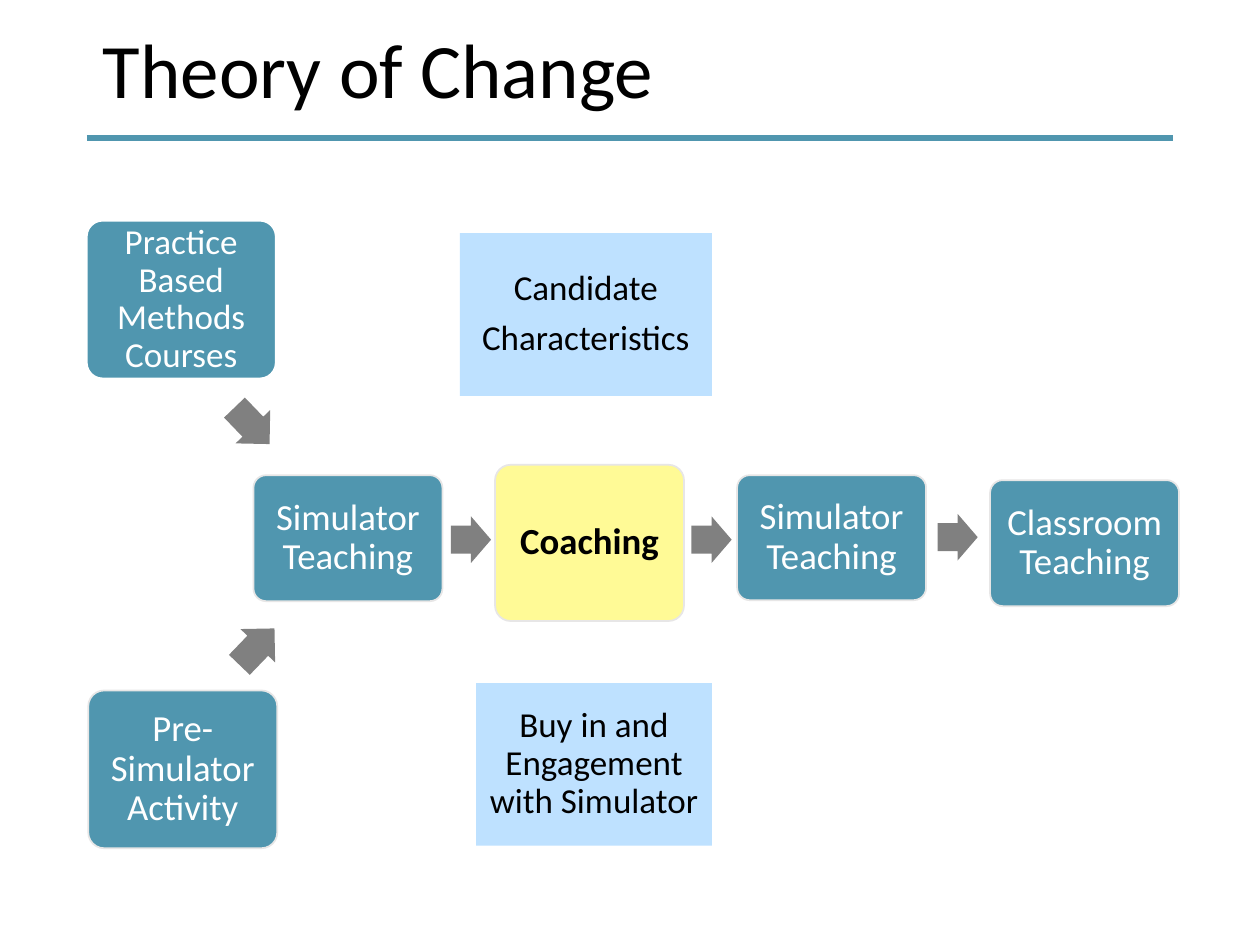
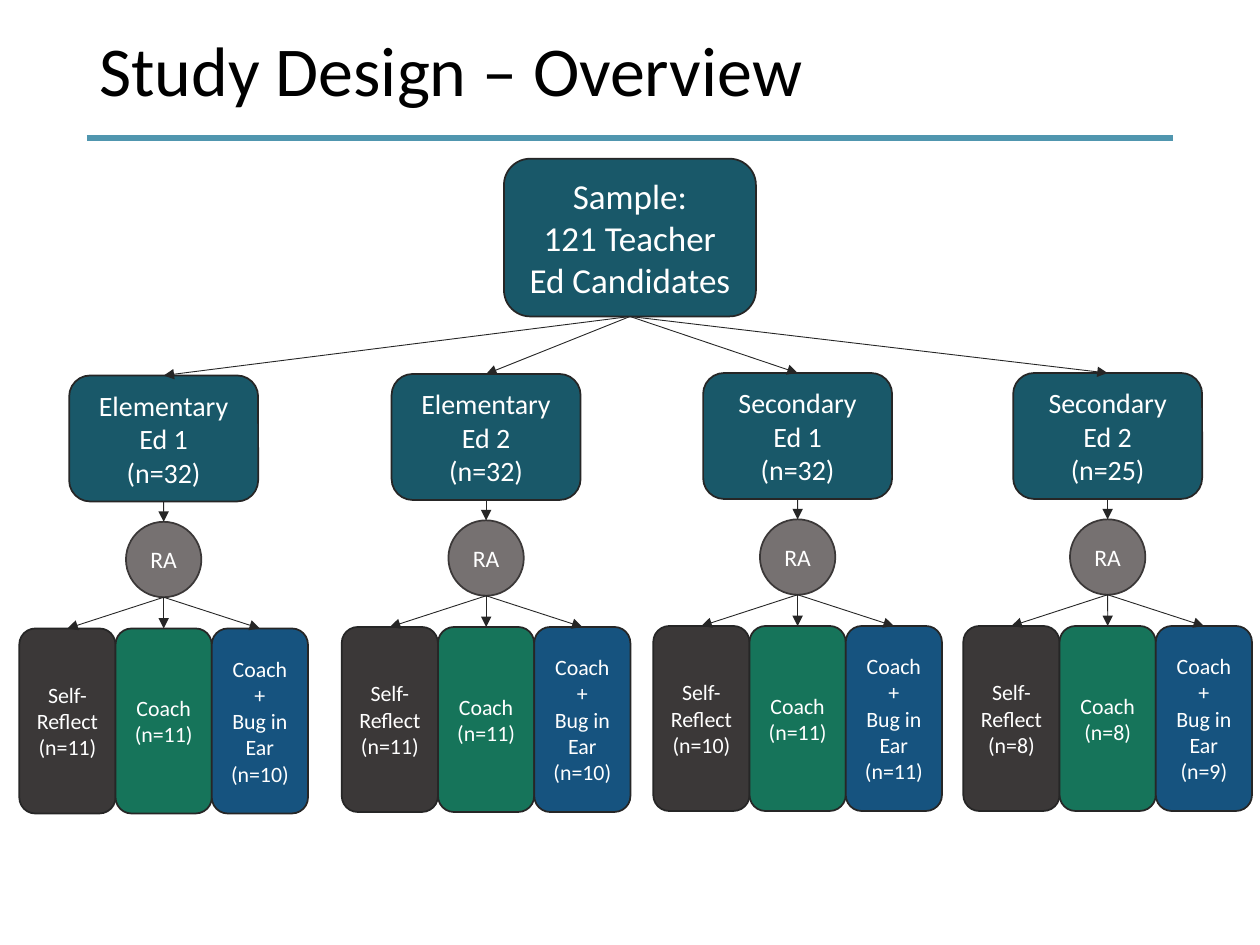
from lxml import etree
from pptx import Presentation
from pptx.dml.color import RGBColor
from pptx.enum.shapes import MSO_CONNECTOR, MSO_SHAPE
from pptx.enum.text import MSO_ANCHOR, MSO_AUTO_SIZE, PP_ALIGN
from pptx.oxml.ns import qn
from pptx.util import Cm, Pt

ROUNDED = MSO_SHAPE.ROUNDED_RECTANGLE
RECTANGLE = MSO_SHAPE.RECTANGLE
CIRCLE = MSO_SHAPE.FLOWCHART_CONNECTOR
BLOCK_ARROW = MSO_SHAPE.RIGHT_ARROW
STRAIGHT = MSO_CONNECTOR.STRAIGHT
CENTER, LEFT = PP_ALIGN.CENTER, PP_ALIGN.LEFT
MIDDLE = MSO_ANCHOR.MIDDLE
NO_AUTOFIT = MSO_AUTO_SIZE.NONE

FONT = "Calibri"
TITLE_ONLY = 5
COLORS = {
    "black": "000000",
    "white": "FFFFFF",
    "teal": "5096AF",
    "border": "E7E6E6",
    "yellow": "FFFA96",
    "sky": "BEE1FF",
    "arrow": "808080",
    "deep_teal": "195869",
    "ink": "262626",
    "gray": "767171",
    "charcoal": "3B3838",
    "green": "16745A",
    "blue": "16537F",
}

# text, left, top, width, height, fill, border, font color, size, bold
STAGES = [
    ("Practice Based Methods Courses", 1.75, 4.45, 3.81, 3.18, "teal", "white", "white", 20, False),
    ("Pre-Simulator Activity", 1.78, 13.92, 3.81, 3.18, "teal", "border", "white", 21, False),
    ("Simulator Teaching", 5.11, 9.58, 3.81, 2.54, "teal", "border", "white", 21, False),
    ("Coaching", 9.98, 9.37, 3.81, 3.15, "yellow", "border", "black", 21, True),
    ("Simulator Teaching", 14.86, 9.58, 3.81, 2.52, "teal", "border", "white", 21, False),
    ("Classroom Teaching", 19.96, 9.68, 3.81, 2.54, "teal", "border", "white", 21, False),
]
# paragraphs, left, top, width, height
MODERATORS = [
    (["Candidate", "Characteristics"], 9.27, 4.7, 5.08, 3.28),
    (["Buy in and Engagement with Simulator"], 9.6, 13.77, 4.75, 3.28),
]
# left, top, width, height, rotation
STAGE_ARROWS = [
    (4.57, 8.1, 1.02, 0.97, 46.1),
    (4.67, 12.55, 1.02, 0.97, 313.9),
    (9.09, 10.41, 0.81, 0.94, 0),
    (13.94, 10.41, 0.81, 0.94, 0),
    (18.9, 10.36, 0.81, 0.94, 0),
]
# name, size, center, top, group sizes (self-reflect, coach, coach + bug in ear)
COHORTS = [
    ("Elementary Ed 1", 32, 3.3, 7.57, (11, 11, 10)),
    ("Elementary Ed 2", 32, 9.8, 7.54, (11, 11, 10)),
    ("Secondary Ed 1", 32, 16.08, 7.52, (10, 11, 11)),
    ("Secondary Ed 2", 25, 22.33, 7.52, (8, 8, 9)),
]
CONDITIONS = [
    (["Self-Reflect"], "charcoal"),
    (["Coach"], "green"),
    (["Coach", "+", "Bug in Ear"], "blue"),
]
COHORT_WIDTH, COHORT_HEIGHT = 3.81, 2.54
CIRCLE_SIZE, CIRCLE_DROP = 1.52, 2.95
CONDITION_WIDTH, CONDITION_HEIGHT, CONDITION_DROP = 1.94, 3.73, 5.1


def rgb(name):
    return RGBColor.from_string(COLORS[name])


def write(paragraph, text, size, color, bold=False, align=CENTER):
    paragraph.alignment = align
    run = paragraph.add_run()
    run.text = text
    run.font.name = FONT
    run.font.size = Pt(size)
    run.font.bold = bold
    run.font.color.rgb = rgb(color)


def add_lines(shape, lines, size, color="white", bold=False, compact=False):
    """Write one centred paragraph per line; compact tightens margins and line spacing."""
    frame = shape.text_frame
    frame.word_wrap = True
    frame.vertical_anchor = MIDDLE
    if compact:
        frame.margin_left = frame.margin_right = Cm(0.18)
        frame.margin_top = frame.margin_bottom = Cm(0.18)
    for index, line in enumerate(lines):
        paragraph = frame.add_paragraph() if index else frame.paragraphs[0]
        if compact:
            paragraph.line_spacing = 0.9
            paragraph.space_after = Pt(0.35 * size)
        write(paragraph, line, size, color, bold)


def add_box(slide, kind, left, top, width, height, fill, border=None):
    shape = slide.shapes.add_shape(kind, Cm(left), Cm(top), Cm(width), Cm(height))
    shape.shadow.inherit = False
    shape.fill.solid()
    shape.fill.fore_color.rgb = rgb(fill)
    if border:
        shape.line.color.rgb = rgb(border)
        shape.line.width = Pt(1)
    else:
        shape.line.fill.background()
    return shape


def add_line(slide, start, end, color, width, arrow=False):
    line = slide.shapes.add_connector(STRAIGHT, *start, *end)
    line.line.color.rgb = rgb(color)
    line.line.width = Pt(width)
    if arrow:
        etree.SubElement(line.line._get_or_add_ln(), qn("a:tailEnd"), type="triangle")
    etree.SubElement(line._element.spPr, qn("a:effectLst"))


def add_down_arrow(slide, upper, lower):
    """Point from the bottom centre of one shape to the top centre of another."""
    start = (upper.left + upper.width // 2, upper.top + upper.height)
    end = (lower.left + lower.width // 2, lower.top)
    add_line(slide, start, end, "ink", 0.5, arrow=True)


def add_titled_slide(presentation, text, left, size):
    slide = presentation.slides.add_slide(presentation.slide_layouts[TITLE_ONLY])
    title = slide.shapes.title
    title.left, title.top, title.width, title.height = Cm(left), Cm(0.46), Cm(21.89), Cm(2.06)
    frame = title.text_frame
    frame.auto_size = NO_AUTOFIT
    frame.vertical_anchor = MIDDLE
    paragraph = frame.paragraphs[0]
    paragraph.line_spacing = 0.9
    write(paragraph, text, size, "black", align=LEFT)
    add_line(slide, (Cm(1.75), Cm(2.79)), (Cm(23.65), Cm(2.79)), "teal", 3.5)
    return slide


def add_theory_of_change(presentation):
    slide = add_titled_slide(presentation, " Theory of Change", 1.47, 44)
    for text, left, top, width, height, fill, border, color, size, bold in STAGES:
        stage = add_box(slide, ROUNDED, left, top, width, height, fill, border)
        stage.adjustments[0] = 0.1
        add_lines(stage, [text], size, color, bold, compact=True)
    for left, top, width, height, rotation in STAGE_ARROWS:
        arrow = add_box(slide, BLOCK_ARROW, left, top, width, height, "arrow")
        arrow.adjustments[0] = 0.6
        arrow.adjustments[1] = 0.5
        arrow.rotation = rotation
    for lines, left, top, width, height in MODERATORS:
        moderator = add_box(slide, RECTANGLE, left, top, width, height, "sky")
        add_lines(moderator, lines, 20, "black", compact=True)


def add_cohort(slide, sample, name, size, center, top, group_sizes):
    cohort = add_box(slide, ROUNDED, center - COHORT_WIDTH / 2, top,
                     COHORT_WIDTH, COHORT_HEIGHT, "deep_teal", "ink")
    add_lines(cohort, [name, f"(n={size})"], 16)
    add_down_arrow(slide, sample, cohort)

    assignment = add_box(slide, CIRCLE, center - CIRCLE_SIZE / 2, top + CIRCLE_DROP,
                         CIRCLE_SIZE, CIRCLE_SIZE, "gray", "charcoal")
    add_lines(assignment, ["RA"], 13.5)
    add_down_arrow(slide, cohort, assignment)

    for index, ((lines, fill), group_size) in enumerate(zip(CONDITIONS, group_sizes)):
        left = center + (index - len(CONDITIONS) / 2) * CONDITION_WIDTH
        condition = add_box(slide, ROUNDED, left, top + CONDITION_DROP,
                            CONDITION_WIDTH, CONDITION_HEIGHT, fill, "ink")
        add_lines(condition, lines + [f"(n={group_size})"], 12.5)
        add_down_arrow(slide, assignment, condition)


def add_study_design(presentation):
    slide = add_titled_slide(presentation, "Study Design – Overview", 1.75, 40)
    sample = add_box(slide, ROUNDED, 10.16, 3.2, 5.08, 3.18, "deep_teal", "ink")
    add_lines(sample, ["Sample:", "121 Teacher Ed Candidates"], 20)
    for cohort in COHORTS:
        add_cohort(slide, sample, *cohort)


def main():
    presentation = Presentation()
    presentation.slide_width = Cm(25.4)
    presentation.slide_height = Cm(19.05)
    add_theory_of_change(presentation)
    add_study_design(presentation)
    presentation.save("out.pptx")


if __name__ == "__main__":
    main()
